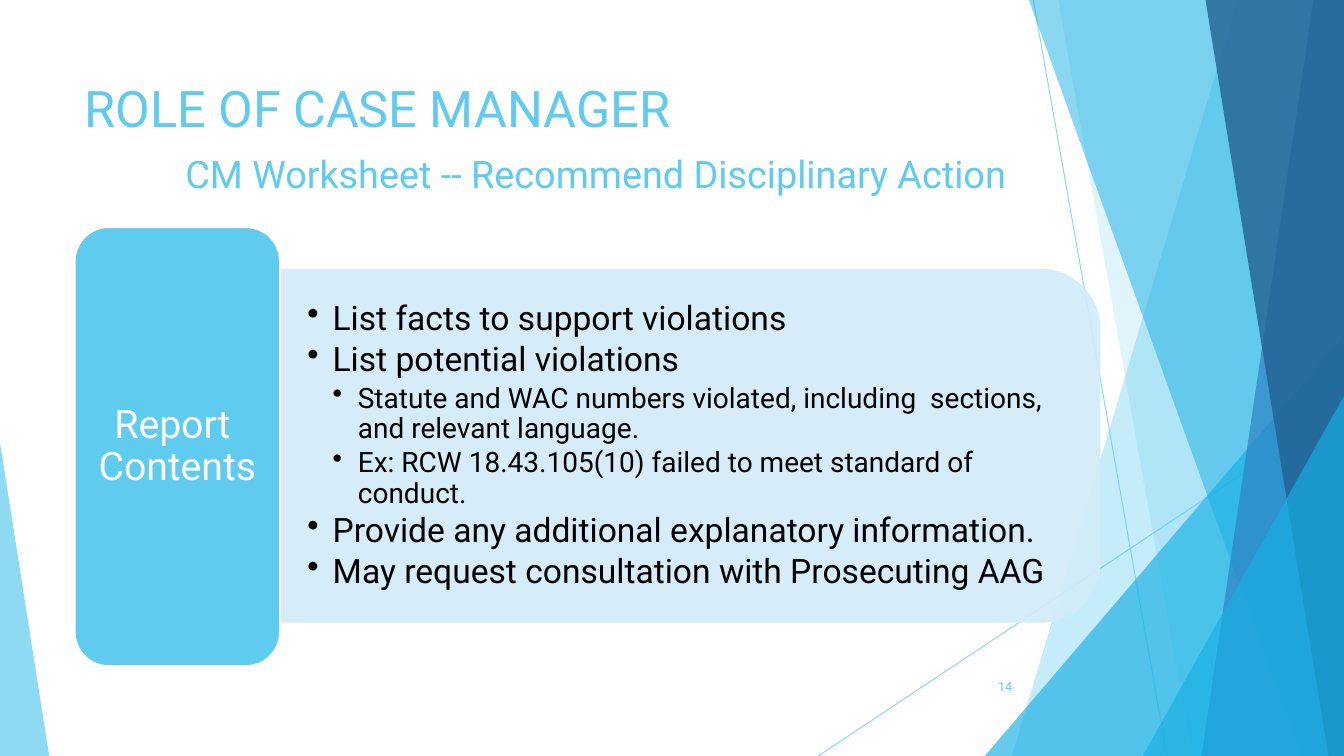
from lxml.etree import SubElement
from pptx import Presentation
from pptx.dml.color import RGBColor
from pptx.enum.shapes import MSO_CONNECTOR, MSO_SHAPE
from pptx.enum.text import MSO_ANCHOR, MSO_AUTO_SIZE, PP_ALIGN
from pptx.oxml.ns import qn
from pptx.util import Cm, Pt

SKY = RGBColor(0x5F, 0xCB, 0xEF)
CYAN = RGBColor(0x17, 0xB0, 0xE4)
BLUE = RGBColor(0x2E, 0x83, 0xC3)
NAVY = RGBColor(0x22, 0x62, 0x92)
PALE = RGBColor(0xD2, 0xEC, 0xF9)
WHITE = RGBColor(0xFF, 0xFF, 0xFF)
BLACK = RGBColor(0, 0, 0)
FONT = "Roboto"
WIDTH, HEIGHT = 33.87, 19.05

HEADING = "ROLE OF CASE MANAGER"
SUBHEADING = "CM Worksheet -- Recommend Disciplinary Action"
TAB_LABEL = "Report  Contents"
PAGE_NUMBER = "14"
REPORT_ITEMS = [
    (1, "List facts to support violations"),
    (1, "List potential violations"),
    (2, "Statute and WAC numbers violated, including  sections, and relevant language."),
    (2, "Ex: RCW 18.43.105(10) failed to meet standard of conduct."),
    (1, "Provide any additional explanatory information."),
    (1, "May request consultation with Prosecuting AAG"),
]
ITEM_SIZES = {1: 24, 2: 20}

RAYS = [(26.04, 0, 29.41, HEIGHT), (WIDTH, 10.24, 20.62, HEIGHT)]
FACETS = [
    ("band", (31.19, 25.5), SKY, 36),
    ("band", (26.67, 30.05), SKY, 20),
    ("right peak", (24.82, 8.46, 9.05), CYAN, 66),
    ("band", (25.93, 32.79), CYAN, 50),
    ("band", (33.1, 30.28), BLUE, 70),
    ("band", (30.38, 33.48), NAVY, 80),
    ("right peak", (28.8, 9.98, 5.07), CYAN, 66),
    ("left peak", (0, 11.15, 1.24), SKY, 70),
]

prs = Presentation()
prs.slide_width, prs.slide_height = Cm(WIDTH), Cm(HEIGHT)
slide = prs.slides.add_slide(prs.slide_layouts[5])
shapes = slide.shapes


def set_alpha(shape, percent):
    for color in shape._element.iter(qn("a:srgbClr")):
        SubElement(color, qn("a:alpha"), val=str(percent * 1000))


def paint(shape, color):
    shape.shadow.inherit = False
    shape.fill.solid()
    shape.fill.fore_color.rgb = color
    shape.line.fill.background()


def outline(shape, color, width):
    shape.line.color.rgb = color
    shape.line.width = Pt(width)


def set_font(paragraph, size, color):
    paragraph.font.name = FONT
    paragraph.font.size = Pt(size)
    paragraph.font.color.rgb = color


def set_frame(frame, anchor, side, edge):
    frame.word_wrap = True
    frame.auto_size = MSO_AUTO_SIZE.NONE
    frame.vertical_anchor = anchor
    frame.margin_left = frame.margin_right = Cm(side)
    frame.margin_top = frame.margin_bottom = Cm(edge)


def add_band(top, bottom):
    builder = shapes.build_freeform(Cm(top), 0)
    corners = [(WIDTH, 0), (WIDTH, HEIGHT), (bottom, HEIGHT)]
    builder.add_line_segments([(Cm(x), Cm(y)) for x, y in corners])
    return builder.convert_to_shape()


def add_peak(left, top, width, tip):
    peak = shapes.add_shape(MSO_SHAPE.ISOSCELES_TRIANGLE,
                            Cm(left), Cm(top), Cm(width), Cm(HEIGHT - top))
    peak.adjustments[0] = tip
    return peak


for ends in RAYS:
    ray = shapes.add_connector(MSO_CONNECTOR.STRAIGHT, *map(Cm, ends))
    outline(ray, SKY, 0.75)
    set_alpha(ray, 70)
    SubElement(ray._element.spPr, qn("a:effectLst"))

for kind, place, color, opacity in FACETS:
    if kind == "band":
        facet = add_band(*place)
    else:
        facet = add_peak(*place, tip=1 if kind == "right peak" else 0)
    paint(facet, color)
    set_alpha(facet, opacity)

title = shapes.title
title.left, title.top, title.width, title.height = map(Cm, (1.88, 1.7, 23.88, 3.66))
set_frame(title.text_frame, MSO_ANCHOR.TOP, 0.25, 0.25)
title.text_frame.text = f"{HEADING}\n{SUBHEADING}"
heading, subheading = title.text_frame.paragraphs
for line, size in ((heading, 36), (subheading, 27)):
    line.alignment = PP_ALIGN.LEFT
    set_font(line, size, SKY)
subheading.space_before = Pt(9.5)
subheading._p.get_or_add_pPr().set("marL", str(Cm(2.54)))

panel = shapes.add_shape(MSO_SHAPE.ROUND_2_SAME_RECTANGLE,
                         Cm(12.95), Cm(0.91), Cm(8.86), Cm(20.65))
panel.rotation = 90
paint(panel, PALE)
outline(panel, PALE, 1.5)
set_alpha(panel, 90)

report = shapes.add_textbox(Cm(7.06), Cm(7.24), Cm(20.22), Cm(8)).text_frame
set_frame(report, MSO_ANCHOR.MIDDLE, 0.69, 0.36)
report.text = "\n".join(text for _, text in REPORT_ITEMS)
for item, (level, _) in zip(report.paragraphs, REPORT_ITEMS):
    size = ITEM_SIZES[level]
    item.level = level
    item.line_spacing = 0.9
    item.space_after = Pt(size * 0.15)
    props = item._p.get_or_add_pPr()
    props.set("marL", str(Cm(0.635 * level)))
    props.set("indent", str(-Cm(0.635)))
    SubElement(props, qn("a:buChar"), char="•")
    set_font(item, size, BLACK)

tab = shapes.add_shape(MSO_SHAPE.ROUNDED_RECTANGLE,
                       Cm(1.88), Cm(5.72), Cm(5.18), Cm(11.07))
paint(tab, SKY)
outline(tab, WHITE, 1.5)
set_frame(tab.text_frame, MSO_ANCHOR.MIDDLE, 0.3, 0.15)
tab.text_frame.text = TAB_LABEL
label = tab.text_frame.paragraphs[0]
label.alignment = PP_ALIGN.CENTER
label.line_spacing = 0.9
set_font(label, 28, WHITE)

footer = shapes.add_textbox(Cm(23.85), Cm(16.79), Cm(1.91), Cm(1.02)).text_frame
set_frame(footer, MSO_ANCHOR.MIDDLE, 0.25, 0.13)
footer.text = PAGE_NUMBER
page = footer.paragraphs[0]
page.alignment = PP_ALIGN.RIGHT
set_font(page, 9, SKY)

prs.save("out.pptx")
